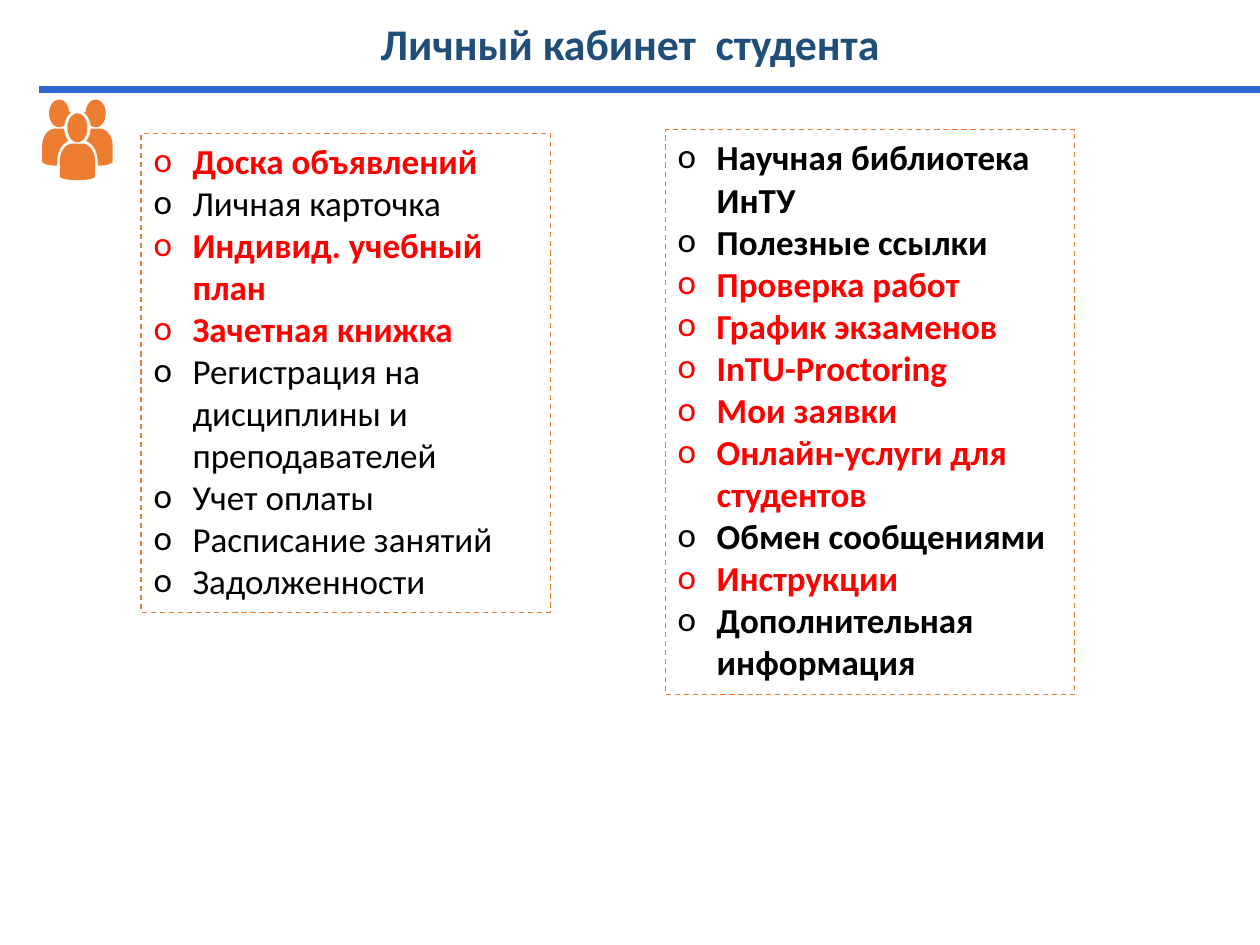
from dataclasses import dataclass
from math import cos, radians, sin

from lxml.etree import SubElement
from pptx import Presentation
from pptx.dml.color import RGBColor
from pptx.enum.dml import MSO_LINE
from pptx.enum.shapes import MSO_CONNECTOR, MSO_SHAPE
from pptx.enum.text import MSO_ANCHOR, MSO_AUTO_SIZE, PP_ALIGN
from pptx.oxml.ns import qn
from pptx.util import Inches, Pt


@dataclass(frozen=True)
class Theme:
    font: str = "Calibri"
    title_size: Pt = Pt(25)
    list_size: Pt = Pt(20)
    title: RGBColor = RGBColor(0x1F, 0x4E, 0x79)
    text: RGBColor = RGBColor(0, 0, 0)
    highlight: RGBColor = RGBColor(0xFF, 0, 0)
    accent: RGBColor = RGBColor(0xED, 0x7D, 0x31)
    rule: RGBColor = RGBColor(0x32, 0x67, 0xD2)


# Each item: text, highlighted, bold
STUDY_ITEMS = [
    ("Доска объявлений", True, True),
    ("Личная карточка", False, False),
    ("Индивид. учебный план", True, True),
    ("Зачетная книжка", True, True),
    ("Регистрация на дисциплины и преподавателей", False, False),
    ("Учет оплаты", False, False),
    ("Расписание занятий", False, False),
    ("Задолженности", False, False),
]
SERVICE_ITEMS = [
    ("Научная библиотека ИнТУ", False, True),
    ("Полезные ссылки", False, True),
    ("Проверка работ", True, True),
    ("График экзаменов", True, True),
    ("InTU-Proctoring", True, True),
    ("Мои заявки", True, True),
    ("Онлайн-услуги для студентов", True, True),
    ("Обмен сообщениями", False, True),
    ("Инструкции", True, True),
    ("Дополнительная информация", False, True),
]


def arc(center, radius, start, end, steps=16):
    """Points along an elliptical arc; angles in degrees, clockwise from the right."""
    angles = [radians(start + (end - start) * i / steps) for i in range(steps + 1)]
    return [(center[0] + radius[0] * cos(a), center[1] + radius[1] * sin(a))
            for a in angles]


def people_contours():
    """Outlines of one person in front of two mirrored ones."""
    middle = 0.615
    head = (middle, 1.015)
    halo = (0.105, 0.14)
    shoulder = (0.1, 0.14)
    front_head = arc(head, (0.08, 0.115), 0, 360, 32)
    front_body = (arc((middle - 0.04, 1.28), shoulder, 180, 270)
                  + arc((middle + 0.04, 1.28), shoulder, 270, 360)
                  + arc((middle, 1.4), (0.14, 0.03), 0, 180))
    back_head = (arc((0.76, 0.9), (0.08, 0.11), 185, 478, 32)
                 + arc(head, halo, -6, -62))
    back_body = (arc((0.79, 1.16), halo, 270, 360)
                 + arc((0.78, 1.28), (0.115, 0.035), 0, 90)
                 + arc((middle + 0.04, 1.28), (0.12, 0.165), 0, -72)
                 + arc(head, halo, 48, 3))
    right = [back_head, back_body]
    left = [[(2 * middle - x, y) for x, y in contour] for contour in right]
    return [front_body, front_head] + right + left


class SlideBuilder:
    def __init__(self, slide, theme):
        self.slide = slide
        self.theme = theme

    def style_run(self, run, **values):
        for name, value in {"name": self.theme.font, **values}.items():
            if name == "color":
                run.font.color.rgb = value
            else:
                setattr(run.font, name, value)

    def title(self, text, left, top, width, height):
        shape = self.slide.shapes.title
        box = {"left": left, "top": top, "width": width, "height": height}
        for name, value in box.items():
            setattr(shape, name, Inches(value))
        frame = shape.text_frame
        frame.vertical_anchor = MSO_ANCHOR.MIDDLE
        paragraph = frame.paragraphs[0]
        paragraph.alignment = PP_ALIGN.CENTER
        paragraph.line_spacing = 0.9
        run = paragraph.add_run()
        run.text = text
        self.style_run(run, size=self.theme.title_size, bold=True,
                       color=self.theme.title)

    def bullet(self, paragraph):
        properties = paragraph._p.get_or_add_pPr()
        indent = Inches(0.31)
        properties.set("marL", str(indent))
        properties.set("indent", str(-indent))
        SubElement(properties, qn("a:buFont")).set("typeface", self.theme.font)
        SubElement(properties, qn("a:buChar")).set("char", "o")

    def list_box(self, items, left, top, width, height):
        shape = self.slide.shapes.add_shape(
            MSO_SHAPE.RECTANGLE, *map(Inches, (left, top, width, height)))
        shape.shadow.inherit = False
        shape.fill.background()
        shape.line.color.rgb = self.theme.accent
        shape.line.width = Pt(0.75)
        shape.line.dash_style = MSO_LINE.DASH
        frame = shape.text_frame
        settings = {"word_wrap": True, "vertical_anchor": MSO_ANCHOR.TOP,
                    "auto_size": MSO_AUTO_SIZE.SHAPE_TO_FIT_TEXT}
        for name, value in settings.items():
            setattr(frame, name, value)
        for index, (text, highlighted, bold) in enumerate(items):
            paragraph = frame.add_paragraph() if index else frame.paragraphs[0]
            paragraph.alignment = PP_ALIGN.LEFT
            self.bullet(paragraph)
            run = paragraph.add_run()
            run.text = text
            color = self.theme.highlight if highlighted else self.theme.text
            self.style_run(run, size=self.theme.list_size, bold=bold, color=color)

    def icon(self, contours):
        outlines = [[(Inches(x), Inches(y)) for x, y in contour]
                    for contour in contours]
        builder = self.slide.shapes.build_freeform(*outlines[0][0])
        builder.add_line_segments(outlines[0][1:])
        for outline in outlines[1:]:
            builder.move_to(*outline[0])
            builder.add_line_segments(outline[1:])
        shape = builder.convert_to_shape()
        shape.shadow.inherit = False
        shape.fill.solid()
        shape.fill.fore_color.rgb = self.theme.accent
        shape.line.fill.background()

    def rule(self, left, right, y):
        line = self.slide.shapes.add_connector(
            MSO_CONNECTOR.STRAIGHT, *map(Inches, (left, y, right, y)))
        line.line.color.rgb = self.theme.rule
        line.line.width = Pt(3.75)
        SubElement(line._element.spPr, qn("a:effectLst"))


def main():
    presentation = Presentation()
    presentation.slide_width = Inches(10)
    presentation.slide_height = Inches(7.5)
    slide = presentation.slides.add_slide(presentation.slide_layouts[5])
    builder = SlideBuilder(slide, Theme())
    builder.title("Личный кабинет  студента", 0.69, 0.07, 8.62, 0.6)
    builder.list_box(STUDY_ITEMS, 1.12, 1.06, 3.25, 3.8)
    builder.list_box(SERVICE_ITEMS, 5.28, 1.03, 3.25, 4.48)
    builder.icon(people_contours())
    builder.rule(0.31, 10, 0.71)
    presentation.save("out.pptx")


if __name__ == "__main__":
    main()
